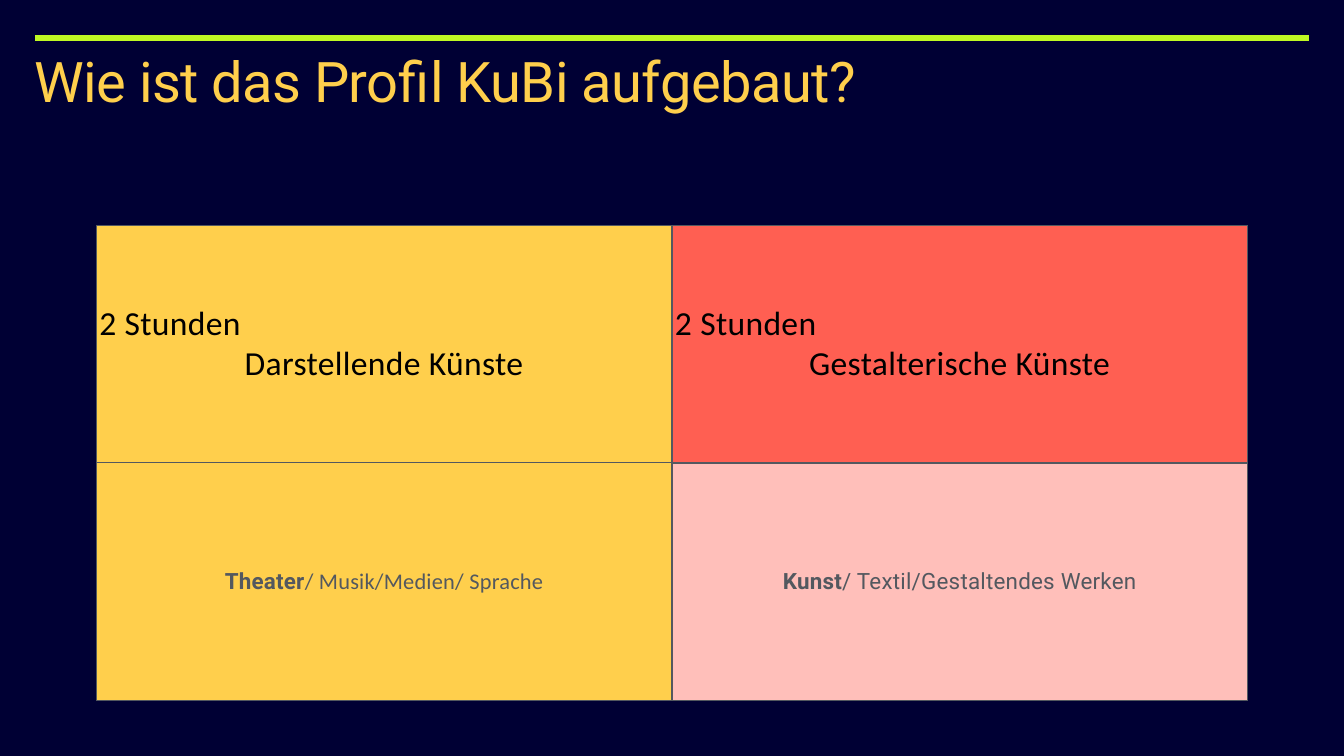
from dataclasses import dataclass

from lxml.etree import SubElement
from pptx import Presentation
from pptx.dml.color import RGBColor
from pptx.enum.shapes import MSO_CONNECTOR
from pptx.enum.text import MSO_ANCHOR, PP_ALIGN
from pptx.oxml.ns import qn
from pptx.slide import Slide
from pptx.table import _Cell
from pptx.text.text import TextFrame, _Paragraph
from pptx.util import Inches, Pt

WIDTH, HEIGHT = 26.67, 15
MARGIN = 0.06
NAVY, LIME, GOLD = "000034", "BFF823", "FFCF4C"
CORAL, ROSE, BLACK, GREY = "FF5F52", "FFBFBA", "000000", "53585F"
SIDES = ("L", "R", "T", "B")


@dataclass(frozen=True)
class Strand:
    hours: str
    field: str
    lead_subject: str
    other_subjects: str
    subjects_font: str
    field_fill: str
    subjects_fill: str
    divider: float


STRANDS = (
    Strand("2 Stunden", "Darstellende Künste", "Theater",
           "/ Musik/Medien/ Sprache", "Calibri", GOLD, GOLD, 1),
    Strand("2 Stunden", "Gestalterische Künste", "Kunst",
           "/ Textil/Gestaltendes Werken", "Roboto", CORAL, ROSE, 3),
)


def across(share: float) -> int:
    return Inches(WIDTH * share)


def down(share: float) -> int:
    return Inches(HEIGHT * share)


def color(value: str) -> RGBColor:
    return RGBColor.from_string(value)


def write(paragraph: _Paragraph, text: str, *, size: float, font: str, ink: str,
          bold: bool = False, align: PP_ALIGN = PP_ALIGN.LEFT,
          tracking: float = 0) -> None:
    paragraph.alignment = align
    run = paragraph.add_run()
    run.text = text
    run.font.size = Pt(size)
    run.font.name = font
    run.font.bold = bold
    run.font.color.rgb = color(ink)
    run.font._element.set("spc", str(round(tracking * 100)))


def set_margins(holder: TextFrame | _Cell) -> None:
    holder.margin_left = holder.margin_right = Inches(MARGIN)
    holder.margin_top = holder.margin_bottom = Inches(MARGIN)


def style_cell(cell: _Cell, fill: str, borders: dict[str, float]) -> None:
    set_margins(cell)
    cell.vertical_anchor = MSO_ANCHOR.MIDDLE
    properties = cell._tc.get_or_add_tcPr()
    for side in SIDES:
        border = SubElement(properties, qn(f"a:ln{side}"), w=str(Pt(borders.get(side, 1))))
        paint = SubElement(border, qn("a:solidFill"))
        SubElement(paint, qn("a:srgbClr"), val=GREY)
    cell.fill.solid()
    cell.fill.fore_color.rgb = color(fill)


def draw_header(slide: Slide) -> None:
    rule = slide.shapes.add_connector(
        MSO_CONNECTOR.STRAIGHT, across(0.026), down(0.0507), across(0.974), down(0.0507))
    rule.line.color.rgb = color(LIME)
    rule.line.width = Pt(9)
    SubElement(rule._element.spPr, qn("a:effectLst"))

    title = slide.shapes.add_textbox(
        across(0.0233), down(0.0753), across(0.953), down(0.142)).text_frame
    title.word_wrap = True
    set_margins(title)
    title.paragraphs[0].line_spacing = 0.8
    write(title.paragraphs[0], "Wie ist das Profil KuBi aufgebaut?",
          size=80, font="Roboto", ink=GOLD, tracking=-0.8)


def draw_strands(slide: Slide) -> None:
    table = slide.shapes.add_table(
        2, len(STRANDS), across(0.0717), down(0.298), across(0.8566), down(0.628)).table
    table.first_row = table.horz_banding = False
    for column, strand in enumerate(STRANDS):
        inner_side = "R" if column == 0 else "L"
        field_cell, subjects_cell = table.cell(0, column), table.cell(1, column)
        style_cell(field_cell, strand.field_fill, {inner_side: 3, "B": strand.divider})
        style_cell(subjects_cell, strand.subjects_fill, {inner_side: 3, "T": strand.divider})

        heading = dict(size=48, font="Calibri", ink=BLACK, tracking=0.5)
        frame = field_cell.text_frame
        write(frame.paragraphs[0], strand.hours, **heading)
        write(frame.add_paragraph(), strand.field, align=PP_ALIGN.CENTER, **heading)

        detail = dict(size=32, ink=GREY, align=PP_ALIGN.CENTER, tracking=0.3)
        subjects = subjects_cell.text_frame.paragraphs[0]
        write(subjects, strand.lead_subject, font="Roboto", bold=True, **detail)
        write(subjects, strand.other_subjects, font=strand.subjects_font, **detail)


def main() -> None:
    deck = Presentation()
    deck.slide_width, deck.slide_height = Inches(WIDTH), Inches(HEIGHT)
    slide = deck.slides.add_slide(deck.slide_layouts[6])
    slide.background.fill.solid()
    slide.background.fill.fore_color.rgb = color(NAVY)
    draw_header(slide)
    draw_strands(slide)
    deck.save("out.pptx")


if __name__ == "__main__":
    main()
